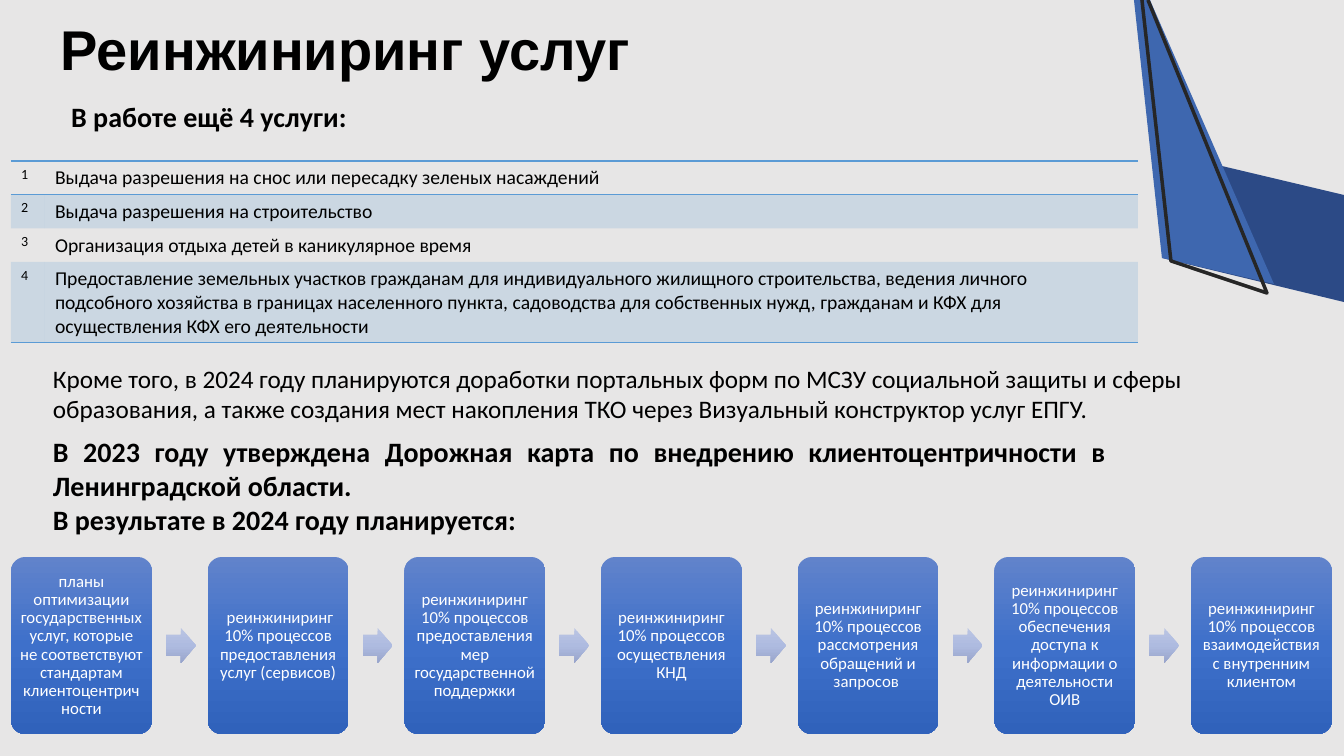
from copy import deepcopy

from pptx import Presentation
from pptx.dml.color import RGBColor
from pptx.enum.shapes import MSO_SHAPE as SHAPE
from pptx.enum.text import MSO_ANCHOR as ANCHOR, PP_ALIGN as ALIGN
from pptx.oxml.ns import qn
from pptx.oxml.xmlchemy import OxmlElement
from pptx.util import Pt

TITLE = "Реинжиниринг услуг"
SUBTITLE = " В работе ещё 4 услуги: "
SERVICES = [
    "Выдача разрешения на снос или пересадку зеленых насаждений",
    "Выдача разрешения на строительство",
    "Организация отдыха детей в каникулярное время",
    "Предоставление земельных участков гражданам для индивидуального жилищного "
    "строительства, ведения личного подсобного хозяйства в границах населенного "
    "пункта, садоводства для собственных нужд, гражданам и КФХ для осуществления "
    "КФХ его деятельности",
]
FORMS_PLAN = (
    "Кроме того, в 2024 году планируются доработки портальных форм по МСЗУ "
    "социальной защиты и сферы образования, а также создания мест накопления ТКО "
    "через Визуальный конструктор услуг ЕПГУ."
)
ROADMAP = [
    "В 2023 году утверждена Дорожная карта по внедрению клиентоцентричности в "
    "Ленинградской области.",
    "В результате в 2024 году планируется:",
]
STEPS = [
    "планы оптимизации государственных услуг, которые не соответствуют стандартам "
    "клиентоцентричности",
    " реинжиниринг 10% процессов предоставления услуг (сервисов)",
    "реинжиниринг 10% процессов предоставления мер государственной поддержки",
    "реинжиниринг 10% процессов осуществления КНД",
    "реинжиниринг 10% процессов рассмотрения обращений и запросов ",
    "реинжиниринг 10% процессов обеспечения доступа к информации о деятельности ОИВ",
    "реинжиниринг 10% процессов взаимодействия с внутренним клиентом",
]

COLORS = {
    "background": "E7E6E6", "text": "000000", "step_text": "FFFFFF",
    "band": "2C4A86", "blade": "3E67AF", "outline": "262626", "table": "5B9BD5",
}
STEP_GRADIENT = ["6183CB", "3E70CA", "3062BB"]
ARROW_GRADIENT = ["BBC5E3", "AEBBE0", "98A4CB"]

# Corner points in px, ending at the slide edge
BAND = [(1344, 195), (1222, 166), (1162, 258), (1344, 302)]
BLADE = [(1162, 258), (1134, 0), (1150, 0), (1274, 284)]
OUTLINE = [(1142, 0), (1171, 261), (1267, 293), (1148, 0)]

SLIDE_W, SLIDE_H = 1344, 756
PX = 12192000 / SLIDE_W
ROW_HEIGHTS = [33, 33, 33, 79]
COLUMN_WIDTHS = [34, 1093]
STEP_LEFT, STEP_TOP, STEP_W, STEP_H = 11, 557, 141, 177
LAST_STEP_LEFT = 1191
ARROW_W, ARROW_H, ARROW_GAP = 30, 35, 14
NO_TABLE_STYLE = "{2D5ABB26-0587-4C30-8999-92F81FD0307C}"


def px(*lengths):
    return [round(length * PX) for length in lengths]


def rgb(name):
    return RGBColor.from_string(COLORS[name])


def write(frame, paragraphs, size, color="text", font="Calibri", bold=False, **layout):
    """Fill a text frame; layout holds paragraph attributes such as alignment."""
    frame.word_wrap = True
    for index, text in enumerate(paragraphs):
        paragraph = frame.add_paragraph() if index else frame.paragraphs[0]
        for attribute, value in layout.items():
            setattr(paragraph, attribute, value)
        run = paragraph.add_run()
        run.text = text
        for attribute, value in {"size": Pt(size), "name": font, "bold": bold}.items():
            setattr(run.font, attribute, value)
        run.font.color.rgb = rgb(color)


def add_text(box, paragraphs, size, **style):
    write(slide.shapes.add_textbox(*px(*box)).text_frame, paragraphs, size, **style)


def add_freeform(points, fill=None, line=None):
    """Draw a closed filled outline, or an open stroked one."""
    builder = slide.shapes.build_freeform(*points[0], scale=PX)
    builder.add_line_segments(points[1:], close=fill is not None)
    freeform = builder.convert_to_shape()
    freeform.shadow.inherit = False
    if fill:
        freeform.fill.solid()
        freeform.fill.fore_color.rgb = rgb(fill)
    else:
        freeform.fill.background()
    if line:
        freeform.line.color.rgb = rgb(line)
        freeform.line.width = Pt(2.5)
    else:
        freeform.line.fill.background()


def add_gradient_shape(kind, box, adjustments, gradient):
    shape = slide.shapes.add_shape(kind, *px(*box))
    shape.shadow.inherit = False
    shape.line.fill.background()
    for index, value in enumerate(adjustments):
        shape.adjustments[index] = value
    shape.fill.gradient()
    shape.fill.gradient_angle = 270
    stop_list = next(shape.element.iter(qn("a:gsLst")))
    stop_list.insert(1, deepcopy(stop_list[0]))
    for index, (stop, color) in enumerate(zip(shape.fill.gradient_stops, gradient)):
        stop.position = index / 2
        stop.color.rgb = RGBColor.from_string(color)
    return shape


def add_border(cell, side):
    """Draw one cell edge: side is lnT (top) or lnB (bottom)."""
    edge = OxmlElement(f"a:{side}")
    edge.set("w", str(Pt(1)))
    color = OxmlElement("a:srgbClr")
    color.set("val", COLORS["table"])
    solid = OxmlElement("a:solidFill")
    solid.append(color)
    edge.append(solid)
    properties = cell._tc.get_or_add_tcPr()
    borders = [child for child in properties if child.tag in (qn("a:lnT"), qn("a:lnB"))]
    properties.insert(len(borders), edge)


def fill_cell(cell, shaded):
    if not shaded:
        cell.fill.background()
        return
    cell.fill.solid()
    cell.fill.fore_color.rgb = rgb("table")
    alpha = OxmlElement("a:alpha")
    alpha.set("val", "20000")
    next(cell._tc.get_or_add_tcPr().iter(qn("a:srgbClr"))).append(alpha)


def add_services():
    last = len(SERVICES) - 1
    frame = slide.shapes.add_table(
        len(SERVICES), 2, *px(11, 161, sum(COLUMN_WIDTHS), sum(ROW_HEIGHTS)))
    table = frame.table
    table.first_row = table.horz_banding = False
    next(frame.element.iter(qn("a:tableStyleId"))).text = NO_TABLE_STYLE
    for column, width in zip(table.columns, px(*COLUMN_WIDTHS)):
        column.width = width
    for row, height in zip(table.rows, px(*ROW_HEIGHTS)):
        row.height = height
    for index, service in enumerate(SERVICES):
        for column, (text, size) in enumerate([(str(index + 1), 10), (service, 14)]):
            cell = table.cell(index, column)
            write(cell.text_frame, [text], size)
            fill_cell(cell, shaded=index % 2 == 1)
            if index == 0:
                add_border(cell, "lnT")
            if index in (0, last):
                add_border(cell, "lnB")


def add_steps():
    pitch = (LAST_STEP_LEFT - STEP_LEFT) / (len(STEPS) - 1)
    arrow_top = STEP_TOP + (STEP_H - ARROW_H) / 2
    for index, step in enumerate(STEPS):
        left = STEP_LEFT + index * pitch
        if index:
            arrow_left = left - pitch + STEP_W + ARROW_GAP
            add_gradient_shape(SHAPE.RIGHT_ARROW, (arrow_left, arrow_top, ARROW_W, ARROW_H),
                               [0.6, 0.5], ARROW_GRADIENT)
        card = add_gradient_shape(SHAPE.ROUNDED_RECTANGLE, (left, STEP_TOP, STEP_W, STEP_H),
                                  [0.1], STEP_GRADIENT)
        frame = card.text_frame
        frame.vertical_anchor = ANCHOR.MIDDLE
        for side in ("left", "right", "top", "bottom"):
            setattr(frame, f"margin_{side}", px(5)[0])
        write(frame, [step], 12, color="step_text", alignment=ALIGN.CENTER, line_spacing=0.9)


deck = Presentation()
deck.slide_width, deck.slide_height = px(SLIDE_W, SLIDE_H)
slide = deck.slides.add_slide(deck.slide_layouts[6])
slide.background.fill.solid()
slide.background.fill.fore_color.rgb = rgb("background")

add_freeform(BAND, fill="band")
add_freeform(BLADE, fill="blade")
add_freeform(OUTLINE, line="outline")
add_text((51, 17, 1077, 88), [TITLE], 40, font="Arial", bold=True, line_spacing=0.9)
add_text((55, 95, 1073, 44), [SUBTITLE], 20, bold=True, alignment=ALIGN.JUSTIFY)
add_services()
add_text((43, 430, 1073, 146), ROADMAP, 20, bold=True, alignment=ALIGN.JUSTIFY)
add_steps()
add_text((43, 358, 1169, 72), [FORMS_PLAN], 18)
deck.save("out.pptx")
